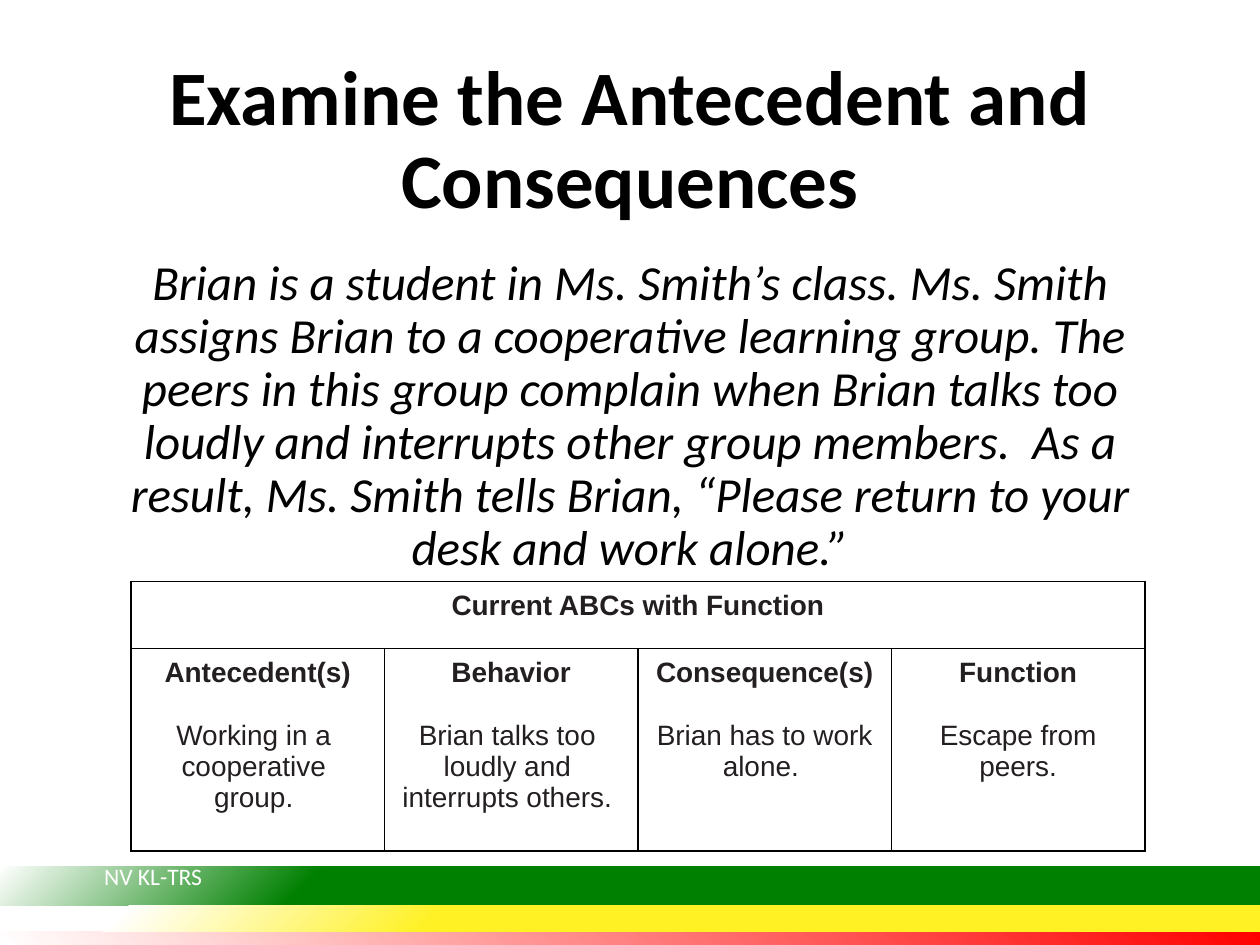
from dataclasses import dataclass

from pptx import Presentation
from pptx import util as u
from pptx.dml.color import RGBColor
from pptx.enum import shapes, text
from pptx.oxml import ns, parse_xml

Cm, Pt = u.Cm, u.Pt


@dataclass(frozen=True)
class Theme:
    ink: str = "000000"
    cell: str = "231F20"
    white: str = "FFFFFF"
    green: str = "008000"
    yellow: str = "FFF123"
    red: str = "FF0000"
    face: str = "Calibri"
    grid: str = "Arial"
    title: float = 44
    body: float = 28
    table: float = 16
    foot: float = 13.5


T = Theme()
WIDE, HIGH = 25.4, 19.05

STORY = (
    "Brian is a student in Ms. Smith’s class. Ms. Smith assigns Brian to a "
    "cooperative learning group. The peers in this group complain when Brian "
    "talks too loudly and interrupts other group members.  As a result, "
    "Ms. Smith tells Brian, “Please return to your desk and work alone.”"
)
HEAD = "Current ABCs with Function"
# Heading, finding, right indent of the finding
PARTS = [
    ("Antecedent(s)", "Working in a cooperative group.", 0.16),
    ("Behavior", "Brian talks too loudly and interrupts others.", 0.16),
    ("Consequence(s)", "Brian has to work alone. ", 0),
    ("Function", "Escape from peers.", 0),
]


def style(para, size, color, face=T.face, bold=False, italic=False):
    for run in para.runs:
        font = run.font
        font.name, font.size = face, Pt(size)
        font.bold, font.italic = bold, italic
        font.color.rgb = RGBColor.from_string(color)


def add_band(slide, top, high, stops, focus):
    """Full-width stripe that fades out from a corner."""
    band = slide.shapes.add_shape(
        shapes.MSO_SHAPE.RECTANGLE, 0, Cm(top), Cm(WIDE), Cm(high))
    band.shadow.inherit = False
    band.line.fill.background()
    band.fill.background()
    marks = "".join(
        f'<a:gs pos="{pos * 1000}"><a:srgbClr val="{color}"/></a:gs>'
        for pos, color in stops)
    fade = parse_xml(
        f'<a:gradFill {ns.nsdecls("a")} rotWithShape="1"><a:gsLst>{marks}</a:gsLst>'
        f'<a:path path="circle"><a:fillToRect {focus}/></a:path></a:gradFill>')
    props = band.element.spPr
    props.replace(props.find(ns.qn("a:noFill")), fade)


def add_text(slide, box, words):
    frame = slide.shapes.add_textbox(*map(Cm, box)).text_frame
    frame.word_wrap = True
    frame.text = words
    return frame.paragraphs[0]


def add_foot(slide):
    para = add_text(slide, (1.85, 17.25, 4.88, 0.84), "NV KL-TRS")
    style(para, T.foot, T.white)
    # Soft shadow behind the letters
    fill = para.runs[0].font.fill._xPr.find(ns.qn("a:solidFill"))
    fill.addnext(parse_xml(
        f'<a:effectLst {ns.nsdecls("a")}><a:outerShdw blurRad="38100" dist="38100" '
        f'dir="2700000"><a:srgbClr val="{T.ink}"><a:alpha val="43000"/></a:srgbClr>'
        '</a:outerShdw></a:effectLst>'))


def set_title(slide, words):
    title = slide.shapes.title
    title.left, title.top, title.width, title.height = map(
        Cm, (1.75, 1.02, 21.9, 3.68))
    frame = title.text_frame
    frame.text = words
    frame.word_wrap = True
    frame.auto_size = text.MSO_AUTO_SIZE.NONE
    frame.vertical_anchor = text.MSO_ANCHOR.MIDDLE
    para = frame.paragraphs[0]
    para.alignment = text.PP_ALIGN.CENTER
    para.line_spacing = 0.9
    style(para, T.title, T.ink, bold=True)


def add_story(slide):
    para = add_text(slide, (1.75, 5.08, 21.9, 12.09), STORY)
    para.alignment = text.PP_ALIGN.CENTER
    para.line_spacing = 0.9
    style(para, T.body, T.ink, italic=True)


def fill_cell(cell, *lines, indent=0):
    """Bold first line, then plain lines after a gap."""
    cell.fill.background()
    cell.margin_left = cell.margin_right = Cm(0.18)
    cell.margin_top = cell.margin_bottom = Cm(0.18)
    cell.text = "\n".join(lines)
    for i, para in enumerate(cell.text_frame.paragraphs):
        para.alignment = text.PP_ALIGN.CENTER
        para.space_before = Pt(18 if i else 0)
        style(para, T.table, T.cell, T.grid, bold=i == 0)
        if i and indent:
            para._p.get_or_add_pPr().set("marR", str(Cm(indent)))


def rule_cell(cell):
    """Thin border on all four sides."""
    props = cell._tc.get_or_add_tcPr()
    for i, side in enumerate("LRTB"):
        props.insert(i, parse_xml(
            f'<a:ln{side} {ns.nsdecls("a")} w="12700"><a:solidFill>'
            f'<a:srgbClr val="{T.ink}"/></a:solidFill></a:ln{side}>'))


def add_grid(slide):
    wide, rows = 5.11, (1.35, 4.09)
    count = len(PARTS)
    table = slide.shapes.add_table(
        len(rows), count, Cm(2.64), Cm(11.72),
        Cm(wide * count), Cm(sum(rows))).table
    table.first_row = table.horz_banding = False
    for col in table.columns:
        col.width = Cm(wide)
    for row, high in zip(table.rows, rows):
        row.height = Cm(high)
    table.cell(0, 0).merge(table.cell(0, count - 1))
    fill_cell(table.cell(0, 0), HEAD)
    for i, (name, note, indent) in enumerate(PARTS):
        fill_cell(table.cell(1, i), name, note, indent=indent)
    for cell in table.iter_cells():
        rule_cell(cell)


def main():
    deck = Presentation()
    deck.slide_width, deck.slide_height = Cm(WIDE), Cm(HIGH)
    slide = deck.slides.add_slide(deck.slide_layouts[5])

    # Footer stripes
    low, high = 'l="100000" t="100000"', 'l="100000" b="100000"'
    add_band(slide, 18.77, 0.3, [(0, T.red), (100, T.white)], high)
    add_band(slide, 17.47, 0.79,
             [(0, T.green), (75, T.green), (100, T.white)], low)
    add_band(slide, 18.26, 0.51,
             [(0, T.yellow), (65, T.yellow), (90, T.white), (100, T.white)], low)
    add_foot(slide)

    # Heading and scenario
    set_title(slide, "Examine the Antecedent and Consequences")
    add_story(slide)

    # Antecedent to function table
    add_grid(slide)
    deck.save("out.pptx")


if __name__ == "__main__":
    main()
